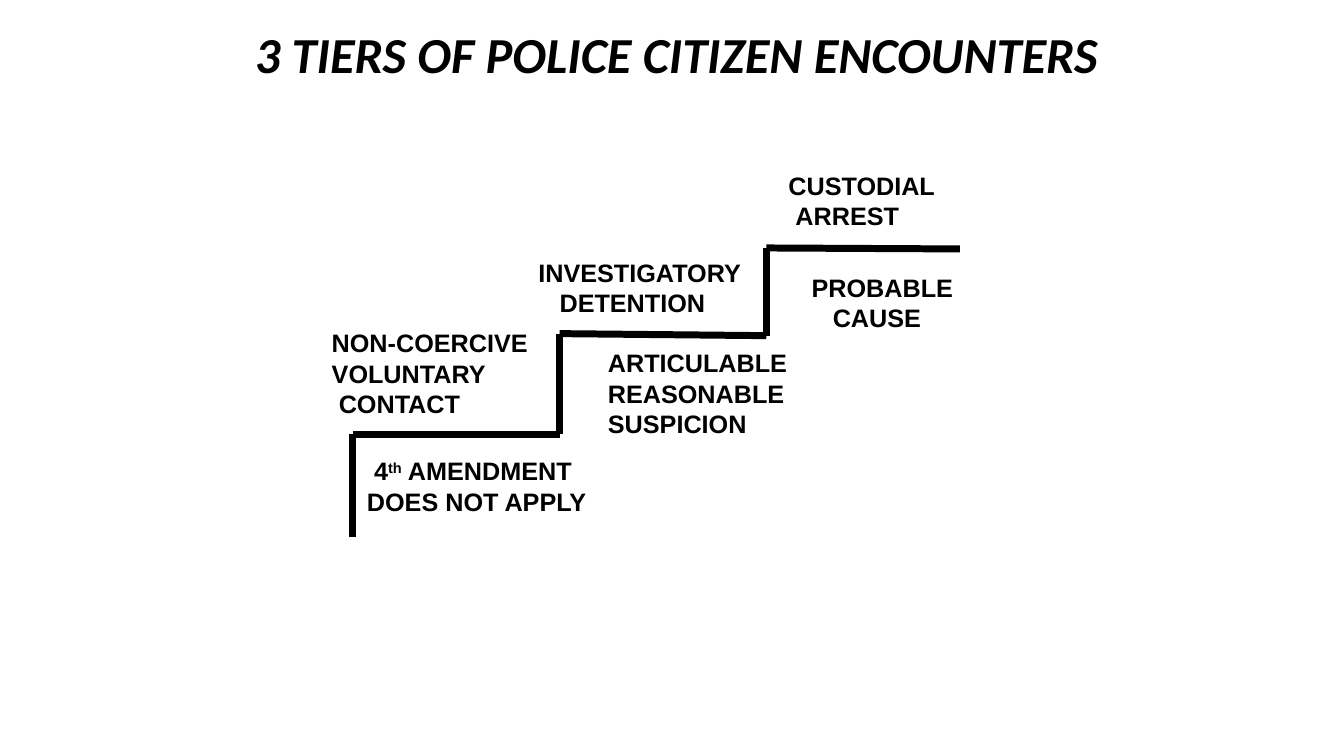
"""Build a slide showing the three tiers of police citizen encounters as a staircase."""
import itertools
from dataclasses import dataclass

import pptx
import pptx.dml.color
import pptx.enum.shapes
import pptx.enum.text
import pptx.oxml
import pptx.oxml.ns
import pptx.slide
import pptx.text.text
import pptx.util
from pptx.util import Inches

COLORS = {"background": "FFFFFF", "ink": "000000"}
SUPERSCRIPT_MARK = "^"


@dataclass(frozen=True)
class Line:
    text: str
    indent: float = 0


@dataclass(frozen=True)
class Label:
    left: float
    top: float
    width: float
    lines: tuple[Line, ...]


LABELS = [
    Label(7.82, 1.69, 1.47, (Line("CUSTODIAL"), Line("ARREST", 0.07))),
    Label(8.05, 2.7, 1.42, (Line("PROBABLE"), Line("CAUSE", 0.21))),
    Label(5.34, 2.55, 2.09, (Line("INVESTIGATORY"), Line("DETENTION", 0.21))),
    Label(3.29, 3.25, 2.02,
          (Line("NON-COERCIVE"), Line("VOLUNTARY"), Line("CONTACT", 0.07))),
    Label(6.03, 3.45, 1.8,
          (Line("ARTICULABLE"), Line("REASONABLE"), Line("SUSPICION"))),
    Label(3.64, 4.52, 2.2,
          (Line("4^th^ AMENDMENT", 0.07), Line("DOES NOT APPLY"))),
]
LINE_HEIGHT = 0.3
STAIR_POINTS = [(3.5, 5.33), (3.5, 4.31), (5.55, 4.31), (5.55, 3.31),
                (7.6, 3.33), (7.6, 2.46), (9.52, 2.47)]


def rgb(name: str) -> pptx.dml.color.RGBColor:
    return pptx.dml.color.RGBColor.from_string(COLORS[name])


def format_run(r: pptx.text.text._Run, font: str, size: float, italic: bool = False) -> None:
    r.font.name = font
    r.font.size = pptx.util.Pt(size)
    r.font.bold = True
    r.font.italic = italic
    r.font.color.rgb = rgb("ink")


def add_title(s: pptx.slide.Slide, text: str) -> None:
    sp = s.shapes.add_textbox(Inches(2.17), Inches(0.25), Inches(9.08), Inches(6.45))
    tf = sp.text_frame
    tf.word_wrap = True
    tf.text = text
    p = tf.paragraphs[0]
    p.alignment = pptx.enum.text.PP_ALIGN.CENTER
    p.line_spacing = 0.9
    p.space_before = pptx.util.Pt(10)
    format_run(p.runs[0], "Calibri", 36, italic=True)


def add_label(s: pptx.slide.Slide, label: Label) -> None:
    sp = s.shapes.add_textbox(Inches(label.left), Inches(label.top), Inches(label.width),
                              Inches(LINE_HEIGHT * len(label.lines)))
    tf = sp.text_frame
    tf.margin_left = tf.margin_top = tf.margin_right = tf.margin_bottom = 0
    tf.word_wrap = False
    tf.auto_size = pptx.enum.text.MSO_AUTO_SIZE.SHAPE_TO_FIT_TEXT
    for i, line in enumerate(label.lines):
        p = tf.add_paragraph() if i else tf.paragraphs[0]
        p.alignment = pptx.enum.text.PP_ALIGN.LEFT
        p._p.get_or_add_pPr().set("marL", str(Inches(line.indent)))
        for j, part in enumerate(line.text.split(SUPERSCRIPT_MARK)):
            r = p.add_run()
            r.text = part
            format_run(r, "Arial", 18)
            if j % 2:
                r._r.get_or_add_rPr().set("baseline", "30000")


def add_stair_line(s: pptx.slide.Slide, start: tuple[float, float],
                   end: tuple[float, float]) -> None:
    sp = s.shapes.add_connector(pptx.enum.shapes.MSO_CONNECTOR.STRAIGHT,
                                *map(Inches, start + end))
    sp.line.color.rgb = rgb("ink")
    sp.line.width = pptx.util.Pt(5)
    sp._element.spPr.append(pptx.oxml.parse_xml(
        f"<a:effectLst {pptx.oxml.ns.nsdecls('a')}/>"))


def main() -> None:
    prs = pptx.Presentation()
    prs.slide_width, prs.slide_height = Inches(13.33), Inches(7.5)
    s = prs.slides.add_slide(prs.slide_layouts[6])
    s.background.fill.solid()
    s.background.fill.fore_color.rgb = rgb("background")
    add_title(s, "3 TIERS OF POLICE CITIZEN ENCOUNTERS")
    for label in LABELS:
        add_label(s, label)
    for start, end in itertools.pairwise(STAIR_POINTS):
        add_stair_line(s, start, end)
    prs.save("out.pptx")


if __name__ == "__main__":
    main()
